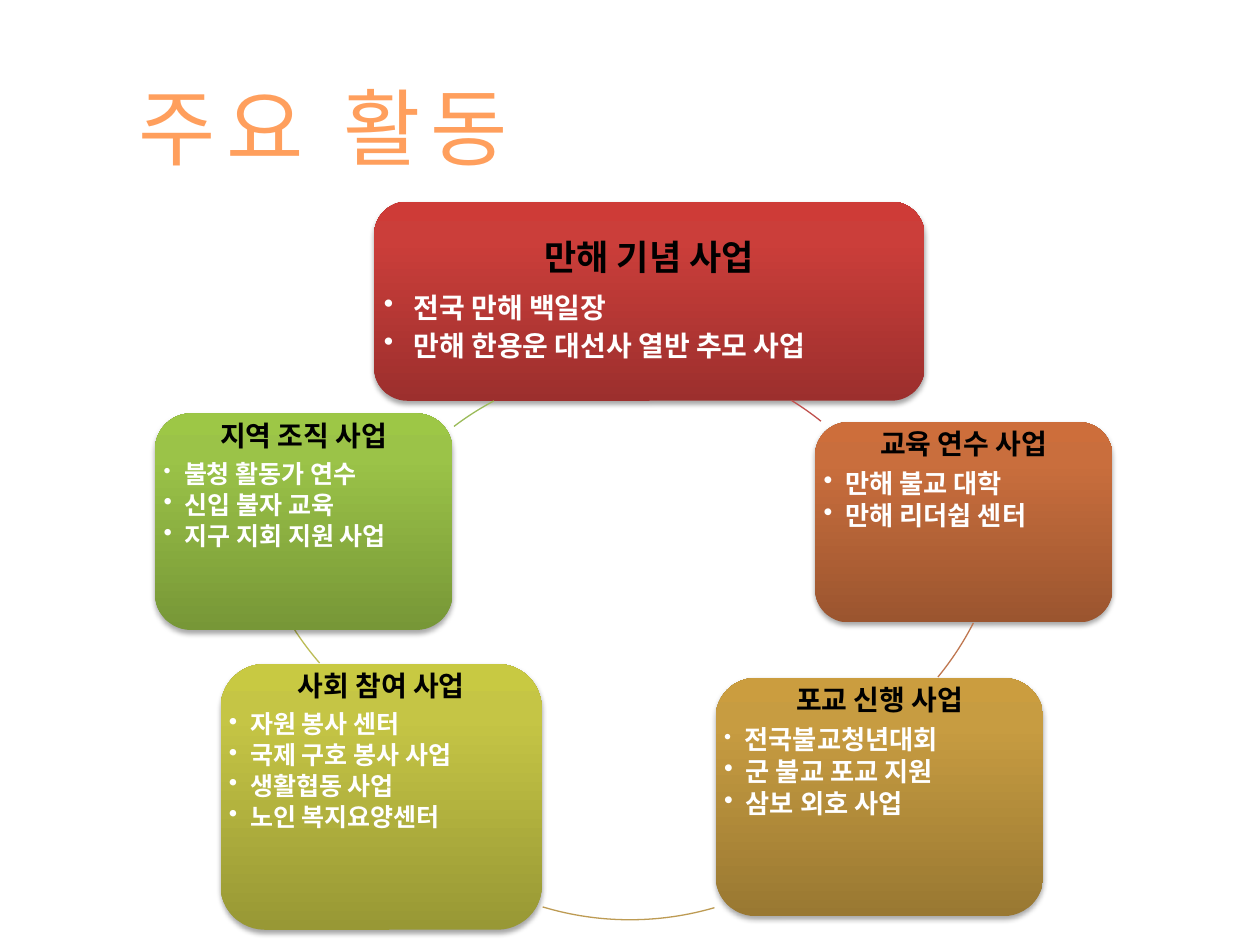
from collections import namedtuple
from math import atan2, degrees
from lxml.etree import SubElement as Sub
from pptx import Presentation
from pptx.dml.color import RGBColor
from pptx.enum.shapes import MSO_SHAPE as Kind
from pptx.enum.text import MSO_ANCHOR as Anchor, MSO_AUTO_SIZE as Fit, PP_ALIGN as Align
from pptx.oxml.ns import qn
from pptx.util import Pt

FONT = "Noto Sans CJK KR"
RING = 345.6
Card = namedtuple("Card", "box stops head items size lead")
CARDS = [
    Card((213.8, 115.2, 314.6, 113.8), ("9C2F2D", "CB3E3A", "CE3B37"), "만해 기념 사업",
         ["전국 만해 백일장", "만해 한용운 대선사 열반 추모 사업"], 16, 16),
    Card((465.8, 241.2, 169.9, 114.5), ("9B552F", "C96E3D", "CD6E3B"), "교육 연수 사업",
         ["만해 불교 대학", "만해 리더쉽 센터"], 15, 15),
    Card((409, 387.4, 187.2, 136.1), ("997832", "C79C41", "CB9D3F"), "포교 신행 사업",
         ["전국불교청년대회", "군 불교 포교 지원", "삼보 외호 사업"], 15, 12),
    Card((126, 379.4, 183.6, 151.9), ("989835", "C5C545", "C8C942"), "사회 참여 사업",
         ["자원 봉사 센터", "국제 구호 봉사 사업", "생활협동 사업", "노인 복지요양센터"], 14.3, 14.3),
    Card((88.6, 236.2, 169.9, 123.8), ("779737", "9BC348", "9DC746"), "지역 조직 사업",
         ["불청 활동가 연수", "신입 불자 교육", "지구 지회 지원 사업"], 14.3, 12),
]
ARCS = [
    ("C0504D", (188.6, 203), (452.2, 229), (469.4, 240.5)),
    ("BF7750", (229.7, 104.4), (555.8, 355.7), (535.7, 386.6)),
    ("BD9B53", (187.2, 180), (408.2, 518.4), (310.3, 517.7)),
    ("BCBC56", (140.4, 92.9), (182.9, 378.7), (168.5, 360)),
    ("9BBB59", (190.8, 208.8), (259.2, 243.4), (282.2, 229)),
]


def color(code):
    """Turn a hex string into a colour."""
    return RGBColor.from_string(code)


def blend(fill, node, stops, angle):
    """Give a fill a gradient of (percent, colour) stops."""
    fill.gradient()
    fill.gradient_angle = angle
    group = node.find(".//" + qn("a:gsLst"))
    for old in list(group):
        group.remove(old)
    for part, code in stops:
        stop = Sub(group, qn("a:gs"), pos=str(part * 1000))
        Sub(stop, qn("a:srgbClr"), val=code)


def shade(shape):
    """Drop a soft shadow below a shape."""
    shape.shadow.inherit = False
    effects = shape._element.spPr.find(qn("a:effectLst"))
    drop = Sub(effects, qn("a:outerShdw"), blurRad=str(Pt(3.1)), dist=str(Pt(1.8)),
               dir="5400000", rotWithShape="0")
    tone = Sub(drop, qn("a:srgbClr"), val="000000")
    Sub(tone, qn("a:alpha"), val="35000")


def write(para, text, size, code=None, bold=True):
    """Add one run and return it."""
    run = para.add_run()
    run.text = text
    font = run.font
    font.name, font.size, font.bold = FONT, Pt(size), bold
    if code:
        font.color.rgb = color(code)
    Sub(run._r.get_or_add_rPr(), qn("a:ea"), typeface=FONT)
    return run


def bullet(para, indent):
    """Set a hanging bullet on a paragraph."""
    props = para._p.get_or_add_pPr()
    props.set("marL", str(Pt(indent)))
    props.set("indent", str(-Pt(indent)))
    Sub(props, qn("a:buChar"), char="•")


def add_card(slide, card, main):
    """Draw a rounded card with its heading and bullets."""
    shape = slide.shapes.add_shape(Kind.ROUNDED_RECTANGLE, *map(Pt, card.box))
    blend(shape.fill, shape._element.spPr, zip((0, 80, 100), card.stops), 90)
    shape.line.fill.background()
    shade(shape)
    frame = shape.text_frame
    frame.word_wrap = True
    pad = Pt((5.8 if main else 5) - 0.05 * card.box[3])
    frame.margin_left = frame.margin_right = frame.margin_top = frame.margin_bottom = pad
    frame.vertical_anchor = Anchor.MIDDLE if main else Anchor.TOP
    size = 20 if main else 16
    para = frame.paragraphs[0]
    para.alignment, para.line_spacing = Align.CENTER, 0.9
    para.space_after = Pt(0.35 * size)
    write(para, card.head, size, "000000")
    for rank, item in enumerate(card.items):
        para = frame.add_paragraph()
        para.level = 1
        para.alignment = Align.JUSTIFY if main else Align.LEFT
        para.line_spacing = 1.0 if main else 0.9
        para.space_after = Pt(0.15 * card.size)
        bullet(para, 13.5 if main else 9)
        write(para, " ", card.size if rank else card.lead, "FFFFFF")
        write(para, item, card.size, "FFFFFF")


def add_arc(slide, code, corner, *ends):
    """Draw the part of a ring between two points."""
    arc = slide.shapes.add_shape(Kind.ARC, *map(Pt, (*corner, RING, RING)))
    left, top = (edge + RING / 2 for edge in corner)
    for rank, (x, y) in enumerate(ends):
        arc.adjustments[rank] = degrees(atan2(y - top, x - left)) % 360 * 0.6
    arc.fill.background()
    arc.line.color.rgb = color(code)
    arc.line.width = Pt(0.75)
    arc.shadow.inherit = False


def add_title(slide, text):
    """Place and format the slide title."""
    title = slide.shapes.title
    title.left, title.top, title.width, title.height = map(Pt, (72, 38, 267, 67.7))
    frame = title.text_frame
    frame.word_wrap = False
    frame.auto_size = Fit.SHAPE_TO_FIT_TEXT
    frame.vertical_anchor = Anchor.MIDDLE
    para = frame.paragraphs[0]
    para.alignment = Align.LEFT
    run = write(para, text, 48, bold=False)
    props = run._r.get_or_add_rPr()
    props.set("spc", "600")
    tones = ("FFA367", "FF9F5D", "F38E3A", "FF9F5D", "FFA367")
    blend(run.font.fill, props, zip(range(0, 101, 25), tones), 270)


def main():
    """Build the slide and save it."""
    deck = Presentation()
    deck.slide_width, deck.slide_height = Pt(720), Pt(540)
    slide = deck.slides.add_slide(deck.slide_layouts[5])
    add_title(slide, "주요 활동")
    for rank, (card, arc) in enumerate(zip(CARDS, ARCS)):
        add_card(slide, card, rank == 0)
        add_arc(slide, *arc)
    deck.save("out.pptx")


if __name__ == "__main__":
    main()
